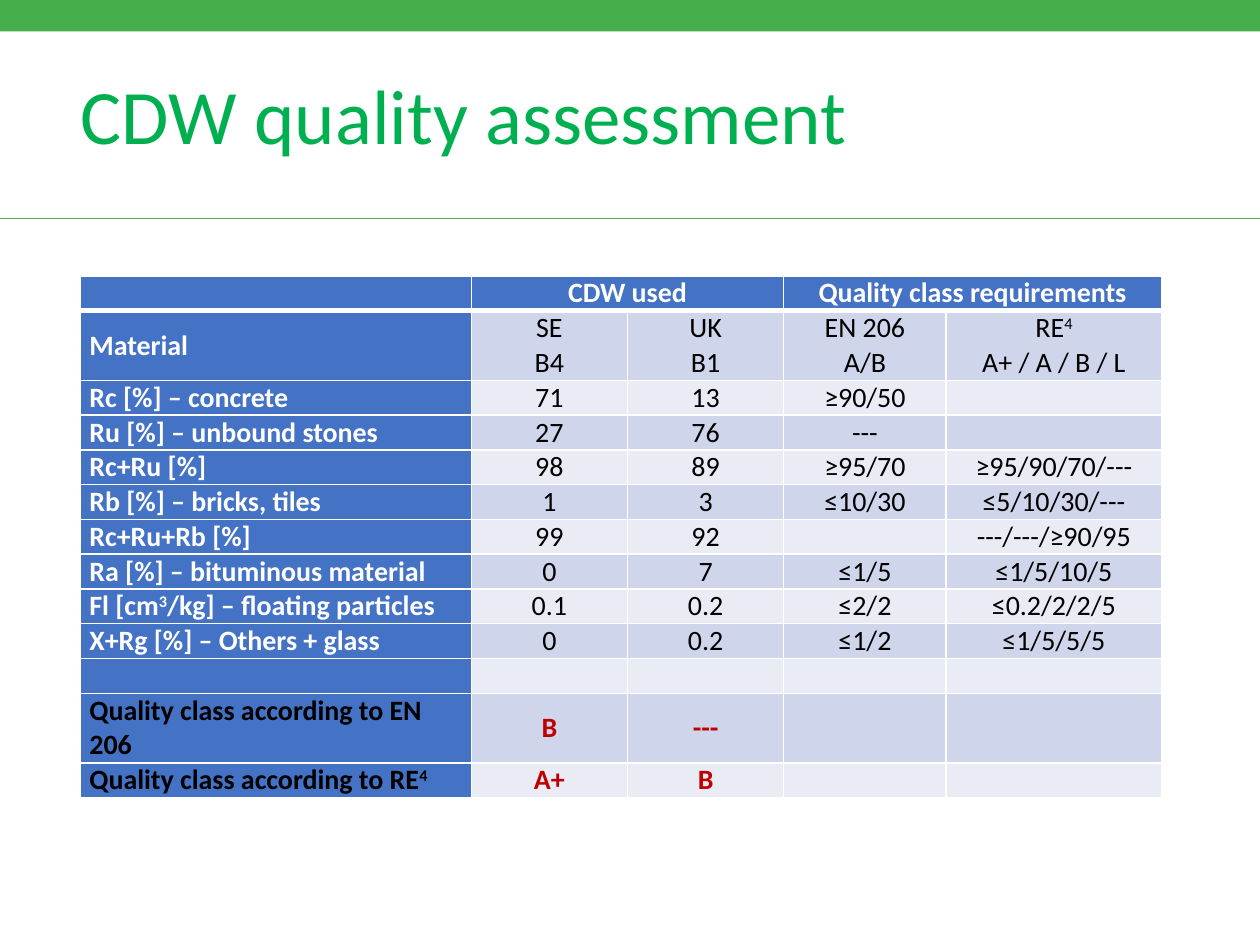
from dataclasses import dataclass

from lxml import etree
from pptx import Presentation
from pptx.dml.color import RGBColor
from pptx.enum.shapes import MSO_CONNECTOR, MSO_SHAPE
from pptx.enum.text import MSO_ANCHOR, PP_ALIGN
from pptx.oxml.ns import qn
from pptx.util import Inches, Pt

LEFT, CENTER = PP_ALIGN.LEFT, PP_ALIGN.CENTER
MIDDLE = MSO_ANCHOR.MIDDLE
RECTANGLE, STRAIGHT = MSO_SHAPE.RECTANGLE, MSO_CONNECTOR.STRAIGHT
TITLE_ONLY = 5


@dataclass(frozen=True)
class Theme:
    """Colours, font and type sizes of the slide."""
    font: str = "Calibri"
    title_size: int = 44
    table_size: int = 16
    band: str = "47AE4C"
    title: str = "00B050"
    heading: str = "4472C4"
    stripes: tuple = ("E9EBF5", "CFD5EA")
    white: str = "FFFFFF"
    black: str = "000000"
    result: str = "C00000"


THEME = Theme()
GRID_COLUMNS, GRID_ROWS = 100, 75
COLUMN_WIDTHS = (31, 12.4, 12.4, 12.9, 17.1)
ROW_HEIGHT = 2.76
TALL_ROWS = (1, 11)
RESULT_ROWS = (11, 12)
MATERIALS = (
    ("", "CDW used", "", "Quality class requirements", ""),
    ("Material", "SE\nB4", "UK\nB1", "EN 206\nA/B", "RE^4^\nA+ / A / B / L"),
    ("Rc [%] – concrete", "71", "13", "≥90/50", ""),
    ("Ru [%] – unbound stones", "27", "76", "---", ""),
    ("Rc+Ru [%]", "98", "89", "≥95/70", "≥95/90/70/---"),
    ("Rb [%] – bricks, tiles", "1", "3", "≤10/30", "≤5/10/30/---"),
    ("Rc+Ru+Rb [%]", "99", "92", "", "---/---/≥90/95"),
    ("Ra [%] – bituminous material", "0", "7", "≤1/5", "≤1/5/10/5"),
    ("Fl [cm^3^/kg] – floating particles", "0.1", "0.2", "≤2/2", "≤0.2/2/2/5"),
    ("X+Rg [%] – Others + glass", "0", "0.2", "≤1/2", "≤1/5/5/5"),
    ("", "", "", "", ""),
    ("Quality class according to EN 206", "B", "---", "", ""),
    ("Quality class according to RE^4^", "A+", "B", "", ""),
)


def grid(*cells):
    """Turn counts of grid cells into lengths."""
    return [Inches(count / 10) for count in cells]


def set_values(target, values):
    """Set each attribute named in a dict of format values."""
    for name, value in values.items():
        setattr(target, name, value)


def format_font(font, size, color, bold=False):
    """Apply the theme font with a size, colour and weight."""
    set_values(font, {"name": THEME.font, "size": Pt(size), "bold": bold})
    font.color.rgb = RGBColor.from_string(color)


def add_title(slide, text):
    """Fill and place the title placeholder."""
    title = slide.shapes.title
    left, top, width, height = grid(5.4, 2.2, 90.7, 14.5)
    set_values(title, {"left": left, "top": top, "width": width, "height": height})
    title.text_frame.vertical_anchor = MIDDLE
    paragraph = title.text_frame.paragraphs[0]
    paragraph.text = text
    set_values(paragraph, {"alignment": LEFT, "line_spacing": 0.9})
    format_font(paragraph.runs[0].font, THEME.title_size, THEME.title)


def add_band(slide):
    """Draw the solid band along the top edge."""
    band = slide.shapes.add_shape(RECTANGLE, *grid(0, 0, GRID_COLUMNS, 2.5))
    band.shadow.inherit = False
    band.fill.solid()
    band.fill.fore_color.rgb = RGBColor.from_string(THEME.band)
    band.line.fill.background()


def add_rule(slide):
    """Draw the thin rule under the title."""
    rule = slide.shapes.add_connector(STRAIGHT, *grid(0, 17.3, GRID_COLUMNS, 17.3))
    rule.line.width = Pt(0.5)
    rule.line.color.rgb = RGBColor.from_string(THEME.band)
    etree.SubElement(rule._element.spPr, qn("a:effectLst"))


def add_borders(cell, bottom_width):
    """Give a cell white borders with a chosen bottom width."""
    properties = cell._tc.get_or_add_tcPr()
    for side, width in (("L", 1), ("R", 1), ("T", 1), ("B", bottom_width)):
        line = etree.SubElement(properties, qn(f"a:ln{side}"), w=str(Pt(width)))
        fill = etree.SubElement(line, qn("a:solidFill"))
        etree.SubElement(fill, qn("a:srgbClr"), val=THEME.white)


def write_cell(cell, text, alignment, color, bold):
    """Write cell lines, raising text between carets to superscript."""
    cell.text_frame.text = text
    for paragraph, line in zip(cell.text_frame.paragraphs, text.split("\n")):
        paragraph.clear()
        paragraph.alignment = alignment
        for index, part in enumerate(line.split("^")):
            if part:
                run = paragraph.add_run()
                run.text = part
                format_font(run.font, THEME.table_size, color, bold)
                if index % 2:
                    run._r.get_or_add_rPr().set("baseline", "30000")
        if not line:
            etree.SubElement(paragraph._p, qn("a:endParaRPr"),
                             sz=str(THEME.table_size * 100))


def cell_style(row, column):
    """Return the fill, text colour and weight for a table position."""
    is_heading = row == 0 or column == 0
    fill = THEME.heading if is_heading else THEME.stripes[row % 2]
    if row in RESULT_ROWS:
        return fill, THEME.black if column == 0 else THEME.result, True
    return fill, THEME.white if is_heading else THEME.black, is_heading


def add_quality_table(slide):
    """Build the table of material shares and quality classes."""
    heights = [ROW_HEIGHT * (2 if row in TALL_ROWS else 1)
               for row in range(len(MATERIALS))]
    frame = slide.shapes.add_table(
        len(MATERIALS), len(COLUMN_WIDTHS),
        *grid(6.4, 21.9, sum(COLUMN_WIDTHS), sum(heights)))
    table = frame.table
    for column, width in zip(table.columns, grid(*COLUMN_WIDTHS)):
        column.width = width
    for row, height in zip(table.rows, grid(*heights)):
        row.height = height
    side, none = grid(0.7, 0)
    margins = {"margin_left": side, "margin_right": side,
               "margin_top": none, "margin_bottom": none}
    for row, texts in enumerate(MATERIALS):
        for column, text in enumerate(texts):
            cell = table.cell(row, column)
            fill, color, bold = cell_style(row, column)
            set_values(cell, {**margins, "vertical_anchor": MIDDLE})
            add_borders(cell, 3 if row == 0 else 1)
            cell.fill.solid()
            cell.fill.fore_color.rgb = RGBColor.from_string(fill)
            write_cell(cell, text, CENTER if column else LEFT, color, bold)
    for first in (1, 3):
        table.cell(0, first).merge(table.cell(0, first + 1))


def main():
    """Build and save the slide."""
    presentation = Presentation()
    width, height = grid(GRID_COLUMNS, GRID_ROWS)
    set_values(presentation, {"slide_width": width, "slide_height": height})
    slide = presentation.slides.add_slide(presentation.slide_layouts[TITLE_ONLY])
    add_band(slide)
    add_rule(slide)
    add_title(slide, "CDW quality assessment")
    add_quality_table(slide)
    presentation.save("out.pptx")


if __name__ == "__main__":
    main()
